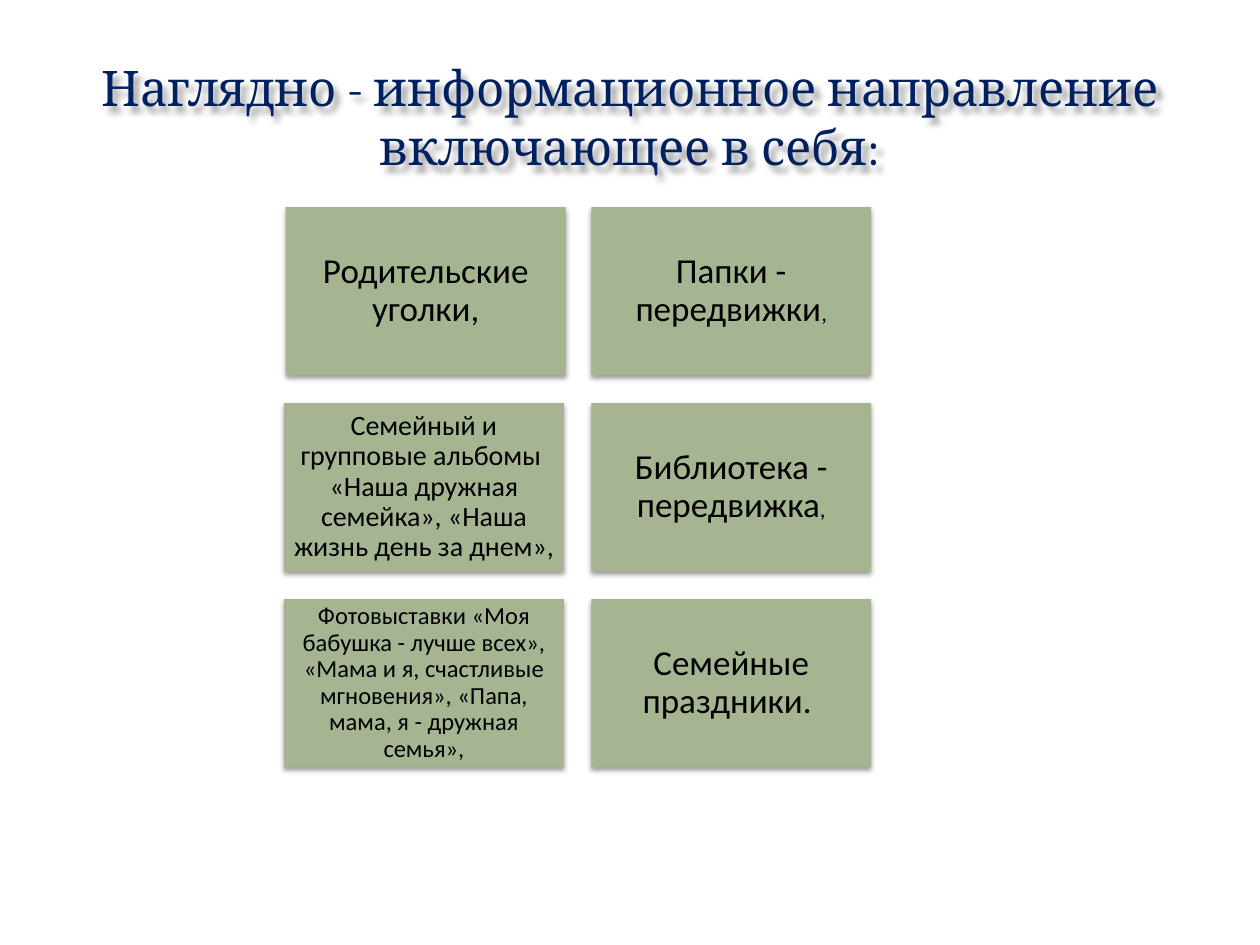
import pptx
import pptx.util
import pptx.dml.color
import pptx.enum.shapes
import pptx.enum.text
import pptx.oxml
import pptx.oxml.ns

Pt = pptx.util.Pt
RGBColor = pptx.dml.color.RGBColor

NAVY = RGBColor(0x00, 0x20, 0x60)
SAGE = RGBColor(0xA5, 0xB5, 0x92)
BLACK = RGBColor(0x00, 0x00, 0x00)

TITLE = "Наглядно - информационное направление включающее в себя:"
CARDS = [
    (("Родительские уголки,", 20),),
    (("Папки - передвижки", 20), (",", 13)),
    (("Семейный и групповые альбомы  «Наша дружная семейка», "
      "«Наша жизнь день за днем», ", 16),),
    (("Библиотека - передвижка", 20), (",", 13)),
    (("Фотовыставки «Моя бабушка - лучше всех», «Мама и я, счастливые "
      "мгновения», «Папа, мама, я - дружная семья»,", 14),),
    (("Семейные праздники. ", 20),),
]


class Deck:
    title_font = {"name": "Cambria", "size": Pt(28), "bold": False}
    card_font = {"name": "Calibri", "bold": False}
    title_shadow = {"blur": 4, "dist": 3.5, "angle": 45, "alpha": 40}
    card_shadow = {"blur": 3.1, "dist": 1.6, "angle": 90, "alpha": 38}

    def __init__(self, width, height):
        self.prs = pptx.Presentation()
        self.prs.slide_width = Pt(width)
        self.prs.slide_height = Pt(height)
        self.s = self.prs.slides.add_slide(self.prs.slide_layouts[5])

    def apply(self, target, values):
        for key, value in values.items():
            setattr(target, key, value)

    def shadow(self, sp, blur, dist, angle, alpha):
        sp.shadow.inherit = False
        effects = sp._element.spPr.find(pptx.oxml.ns.qn("a:effectLst"))
        effects.append(pptx.oxml.parse_xml(
            f'<a:outerShdw {pptx.oxml.ns.nsdecls("a")} blurRad="{Pt(blur)}" '
            f'dist="{Pt(dist)}" dir="{angle * 60000}" rotWithShape="0">'
            f'<a:srgbClr val="000000"><a:alpha val="{alpha * 1000}"/>'
            '</a:srgbClr></a:outerShdw>'))

    def run(self, p, text, color, font):
        r = p.add_run()
        r.text = text
        self.apply(r.font, font)
        r.font.color.rgb = color

    def title(self, text, left, top, width, height):
        sp = self.s.shapes.title
        self.apply(sp, {"left": Pt(left), "top": Pt(top),
                        "width": Pt(width), "height": Pt(height)})
        tf = sp.text_frame
        self.apply(tf, {"word_wrap": True,
                        "auto_size": pptx.enum.text.MSO_AUTO_SIZE.NONE,
                        "vertical_anchor": pptx.enum.text.MSO_ANCHOR.MIDDLE})
        p = tf.paragraphs[0]
        p.alignment = pptx.enum.text.PP_ALIGN.CENTER
        self.run(p, text, NAVY, self.title_font)
        self.shadow(sp, **self.title_shadow)

    def card(self, runs, left, top, width, height):
        sp = self.s.shapes.add_shape(
            pptx.enum.shapes.MSO_SHAPE.RECTANGLE,
            Pt(left), Pt(top), Pt(width), Pt(height))
        sp.fill.solid()
        sp.fill.fore_color.rgb = SAGE
        sp.line.fill.background()
        self.shadow(sp, **self.card_shadow)
        tf = sp.text_frame
        inset = Pt(runs[0][1] * 0.3)
        self.apply(tf, {"word_wrap": True,
                        "vertical_anchor": pptx.enum.text.MSO_ANCHOR.MIDDLE,
                        "margin_left": inset, "margin_right": inset,
                        "margin_top": inset, "margin_bottom": inset})
        p = tf.paragraphs[0]
        self.apply(p, {"alignment": pptx.enum.text.PP_ALIGN.CENTER,
                       "line_spacing": 0.9})
        for text, size in runs:
            self.run(p, text, BLACK, {**self.card_font, "size": Pt(size)})

    def save(self):
        self.prs.save("out.pptx")


def main():
    deck = Deck(720, 540)
    deck.title(TITLE, 36, 21.6, 648, 90)
    for i, runs in enumerate(CARDS):
        row, col = divmod(i, 2)
        left = 163.3 if i == 0 else 162.3 + 175.6 * col
        deck.card(runs, left, 118.3 + 112 * row, 160, 96)
    deck.save()


if __name__ == "__main__":
    main()
